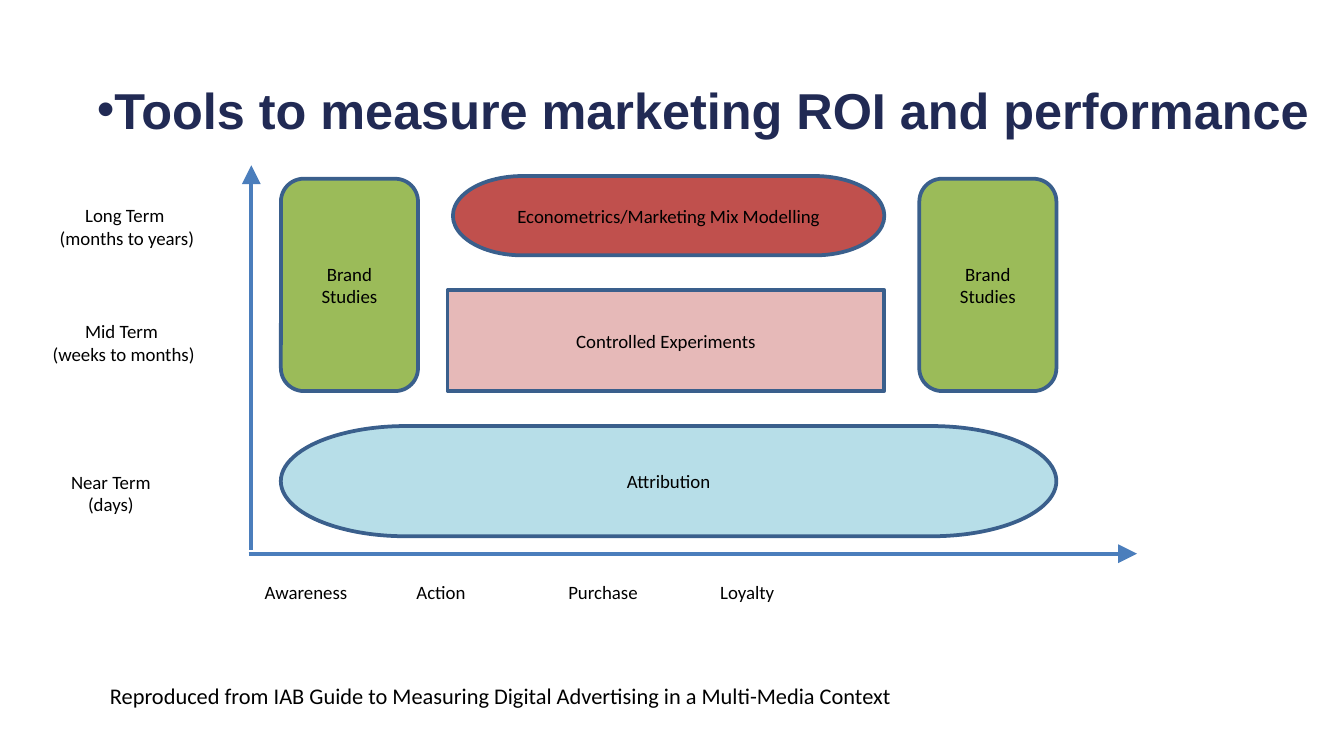
from lxml.etree import SubElement
from pptx import Presentation
from pptx.dml.color import RGBColor
from pptx.enum.shapes import MSO_CONNECTOR, MSO_SHAPE
from pptx.enum.text import MSO_ANCHOR, MSO_AUTO_SIZE, PP_ALIGN
from pptx.oxml.ns import qn
from pptx.util import Inches, Pt

TITLE = "Tools to measure marketing ROI and performance"
SOURCE = "Reproduced from IAB Guide to Measuring Digital Advertising in a Multi-Media Context"
STAGES = ["Awareness", "Action", "Purchase", "Loyalty"]
TERMS = [
    ("Long Term \n(months to years)", 0.33, 1.47, 1.23),
    ("Mid Term \n(weeks to months)", 0.28, 2.33, 1.28),
    ("Near Term\n(days)", 0.42, 3.45, 0.81),
]
LEFT, RIGHT = 2.09, 7.86
BRAND_WIDTH = 1.02
MIDDLE_RIGHT = 6.58
TOOLS = [
    ("Attribution", MSO_SHAPE.FLOWCHART_TERMINATOR, "B7DEE8", LEFT, 3.17, RIGHT, 3.99),
    ("Brand Studies", MSO_SHAPE.FLOWCHART_ALTERNATE_PROCESS, "9BBB59",
     LEFT, 1.33, LEFT + BRAND_WIDTH, 2.91),
    ("Brand Studies", MSO_SHAPE.FLOWCHART_ALTERNATE_PROCESS, "9BBB59",
     RIGHT - BRAND_WIDTH, 1.33, RIGHT, 2.91),
    ("Controlled Experiments", MSO_SHAPE.RECTANGLE, "E6B9B8", 3.33, 2.16, MIDDLE_RIGHT, 2.91),
    ("Econometrics/Marketing Mix Modelling", MSO_SHAPE.FLOWCHART_TERMINATOR, "C0504D",
     3.37, 1.31, MIDDLE_RIGHT, 1.90),
]
AXES = [(1.85, 4.12, 8.46, 4.12), (1.87, 4.09, 1.87, 1.23)]
STAGE_PITCH = 1.13
LABEL_SIZE = 10.1


def color(value):
    return RGBColor.from_string(value)


def format_text(text_frame, size, alignment, name="Calibri", value="000000", bold=False):
    for paragraph in text_frame.paragraphs:
        paragraph.alignment = alignment
        for run in paragraph.runs:
            run.font.size = Pt(size)
            run.font.name = name
            run.font.bold = bold
            run.font.color.rgb = color(value)


def add_axis(slide, *ends):
    connector = slide.shapes.add_connector(MSO_CONNECTOR.STRAIGHT, *map(Inches, ends))
    connector.line.color.rgb = color("4B7EBC")
    connector.line.width = Pt(2)
    SubElement(connector.line._get_or_add_ln(), qn("a:tailEnd"),
               type="triangle", w="lg", len="lg")
    SubElement(connector._element.spPr, qn("a:effectLst"))


def add_tool(slide, text, kind, fill, left, top, right, bottom):
    shape = slide.shapes.add_shape(
        kind, *map(Inches, (left, top, right - left, bottom - top)))
    shape.shadow.inherit = False
    shape.fill.solid()
    shape.fill.fore_color.rgb = color(fill)
    shape.line.color.rgb = color("3A5F8C")
    shape.line.width = Pt(2)
    frame = shape.text_frame
    frame.margin_left = frame.margin_right = Inches(0.07)
    frame.margin_top = frame.margin_bottom = Inches(0.04)
    frame.vertical_anchor = MSO_ANCHOR.MIDDLE
    frame.text = text
    format_text(frame, LABEL_SIZE, PP_ALIGN.CENTER)


def add_label(slide, text, left, top, width, height, size=LABEL_SIZE,
              alignment=PP_ALIGN.LEFT, wrap=False):
    box = slide.shapes.add_textbox(*map(Inches, (left, top, width, height)))
    frame = box.text_frame
    frame.word_wrap = wrap
    frame.auto_size = MSO_AUTO_SIZE.SHAPE_TO_FIT_TEXT
    frame.text = text
    format_text(frame, size, alignment)
    return box


def set_title(slide):
    title = slide.shapes.title
    title.left, title.top, title.width, title.height = map(Inches, (0.4, 0.46, 9.6, 0.71))
    frame = title.text_frame
    frame.margin_left = frame.margin_top = frame.margin_bottom = 0
    frame.margin_right = Inches(0.1)
    frame.vertical_anchor = MSO_ANCHOR.MIDDLE
    frame.auto_size = MSO_AUTO_SIZE.NONE
    frame.text = TITLE
    properties = frame.paragraphs[0]._p.get_or_add_pPr()
    properties.set("marL", "0")
    properties.set("indent", str(Inches(0.32)))
    SubElement(properties, qn("a:buFont"), typeface="Arial")
    SubElement(properties, qn("a:buChar"), char="•")
    format_text(frame, 27, PP_ALIGN.LEFT, "Arial", "212A54", True)


def add_stages(slide):
    box = add_label(slide, "\t".join(STAGES), 1.87, 4.27, 6.59, 0.27, wrap=True)
    properties = box.text_frame.paragraphs[0]._p.get_or_add_pPr()
    tabs = SubElement(properties, qn("a:tabLst"))
    for column in range(1, len(STAGES)):
        SubElement(tabs, qn("a:tab"), pos=str(Inches(column * STAGE_PITCH)), algn="l")


def main():
    presentation = Presentation()
    presentation.slide_width = Inches(10)
    presentation.slide_height = presentation.slide_width * 9 // 16
    slide = presentation.slides.add_slide(presentation.slide_layouts[5])
    set_title(slide)
    for axis in AXES:
        add_axis(slide, *axis)
    for tool in TOOLS:
        add_tool(slide, *tool)
    add_label(slide, SOURCE, 0.72, 5.03, 6.07, 0.3, size=12)
    add_stages(slide)
    for text, left, top, width in TERMS:
        add_label(slide, text, left, top, width, 0.44, alignment=PP_ALIGN.CENTER)
    presentation.save("out.pptx")


if __name__ == "__main__":
    main()
